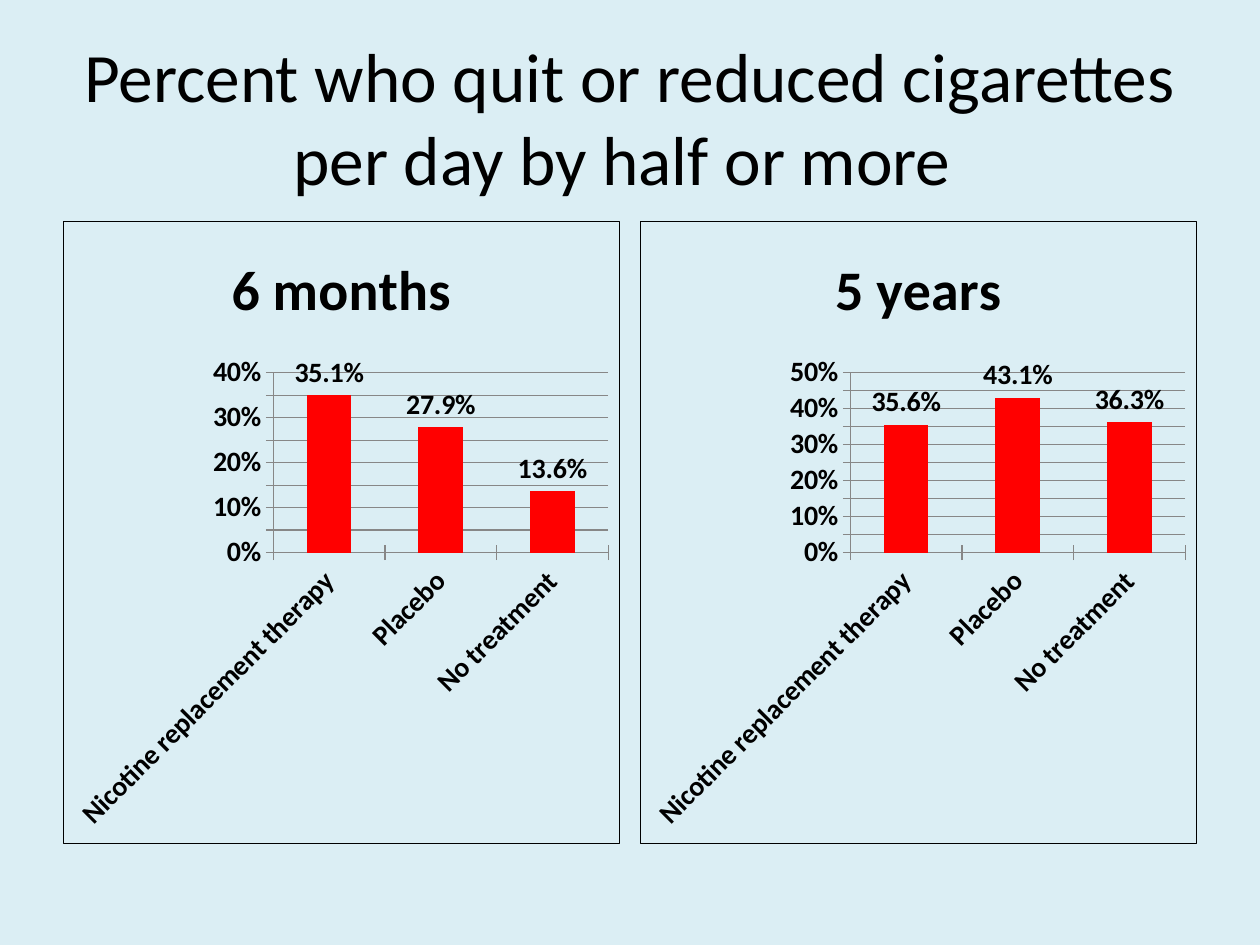
from lxml import etree
from pptx import Presentation
from pptx import util as u
from pptx.chart import data as chart_data
from pptx.dml import color
from pptx.enum import chart as ch, text
from pptx.oxml import parse_xml
from pptx.oxml import ns

FONT = "Calibri"
COLORS = {"background": "DBEEF4", "ink": "000000", "bar": "FF0000", "grid": "878787"}
TREATMENTS = ["Nicotine replacement therapy", "Placebo", "No treatment"]
FOLLOW_UPS = [
    ("6 months", [0.351, 0.279, 0.136], 0.4),
    ("5 years", [0.356, 0.431, 0.363], 0.5),
]
MARGIN, CHART_TOP, CHART_WIDTH, CHART_HEIGHT, GAP = 0.5, 1.75, 4.42, 4.95, 0.16


def rgb(name):
    return color.RGBColor.from_string(COLORS[name])


def style_font(font, size, bold):
    font.name = FONT
    font.size = u.Pt(size)
    font.bold = bold
    font.color.rgb = rgb("ink")


def style_line(line, name):
    line.color.rgb = rgb(name)
    line.width = u.Pt(0.75)


def add_heading(slide, wording):
    heading = slide.shapes.add_textbox(
        u.Inches(MARGIN), u.Inches(0.3), u.Inches(9), u.Inches(1.25))
    frame = heading.text_frame
    frame.word_wrap = True
    frame.vertical_anchor = text.MSO_ANCHOR.MIDDLE
    frame.text = wording
    paragraph = frame.paragraphs[0]
    paragraph.alignment = text.PP_ALIGN.CENTER
    style_font(paragraph.runs[0].font, 39.6, False)


def add_border(chart):
    border = parse_xml(
        f'<c:spPr {ns.nsdecls("c", "a")}><a:noFill/><a:ln w="9525"><a:solidFill>'
        f'<a:srgbClr val="{COLORS["ink"]}"/></a:solidFill></a:ln></c:spPr>')
    chart.element.find(ns.qn("c:chart")).addnext(border)


def style_axes(chart, top_value):
    treatments, percent = chart.category_axis, chart.value_axis
    for axis in (treatments, percent):
        axis.major_tick_mark = ch.XL_TICK_MARK.CROSS
        axis.minor_tick_mark = ch.XL_TICK_MARK.NONE
        style_font(axis.tick_labels.font, 16, True)
        style_line(axis.format.line, "grid")
    slant = treatments.tick_labels.font._element.getparent().getparent().getparent()
    slant.find(ns.qn("a:bodyPr")).set("rot", "-2700000")
    percent.minimum_scale = 0
    percent.maximum_scale = top_value
    percent.major_unit = 0.05
    percent.has_major_gridlines = True
    style_line(percent.major_gridlines.format.line, "grid")
    percent.tick_labels.number_format = "0%"
    percent.tick_labels.number_format_is_linked = False


def style_bars(chart):
    plot = chart.plots[0]
    plot.gap_width = 150
    plot.vary_by_categories = False
    bars = plot.series[0]
    bars.format.fill.solid()
    bars.format.fill.fore_color.rgb = rgb("bar")
    bars.invert_if_negative = False
    labels = bars.data_labels
    labels.show_value = True
    labels.number_format = "0.0%"
    labels.number_format_is_linked = False
    labels.position = ch.XL_LABEL_POSITION.OUTSIDE_END
    style_font(labels.font, 16, True)


def add_quit_chart(slide, left, period, rates, top_value):
    figures = chart_data.CategoryChartData(number_format="0.0%")
    figures.categories = TREATMENTS
    figures.add_series("Series 1", rates)
    chart = slide.shapes.add_chart(
        ch.XL_CHART_TYPE.COLUMN_CLUSTERED, u.Inches(left), u.Inches(CHART_TOP),
        u.Inches(CHART_WIDTH), u.Inches(CHART_HEIGHT), figures).chart
    style_font(chart.font, 16, True)
    chart.has_legend = False
    chart.has_title = True
    period_title = chart.chart_title.text_frame
    period_title.text = period
    style_font(period_title.paragraphs[0].runs[0].font, 32, True)
    style_axes(chart, top_value)
    style_bars(chart)
    add_border(chart)


def main():
    deck = Presentation()
    deck.slide_width, deck.slide_height = u.Inches(10), u.Inches(7.5)
    slide = deck.slides.add_slide(deck.slide_layouts[6])
    slide.background.fill.solid()
    slide.background.fill.fore_color.rgb = rgb("background")
    add_heading(slide, "Percent who quit or reduced cigarettes per day by half or more ")
    for column, (period, rates, top_value) in enumerate(FOLLOW_UPS):
        left = MARGIN + column * (CHART_WIDTH + GAP)
        add_quit_chart(slide, left, period, rates, top_value)
    deck.save("out.pptx")


if __name__ == "__main__":
    main()
